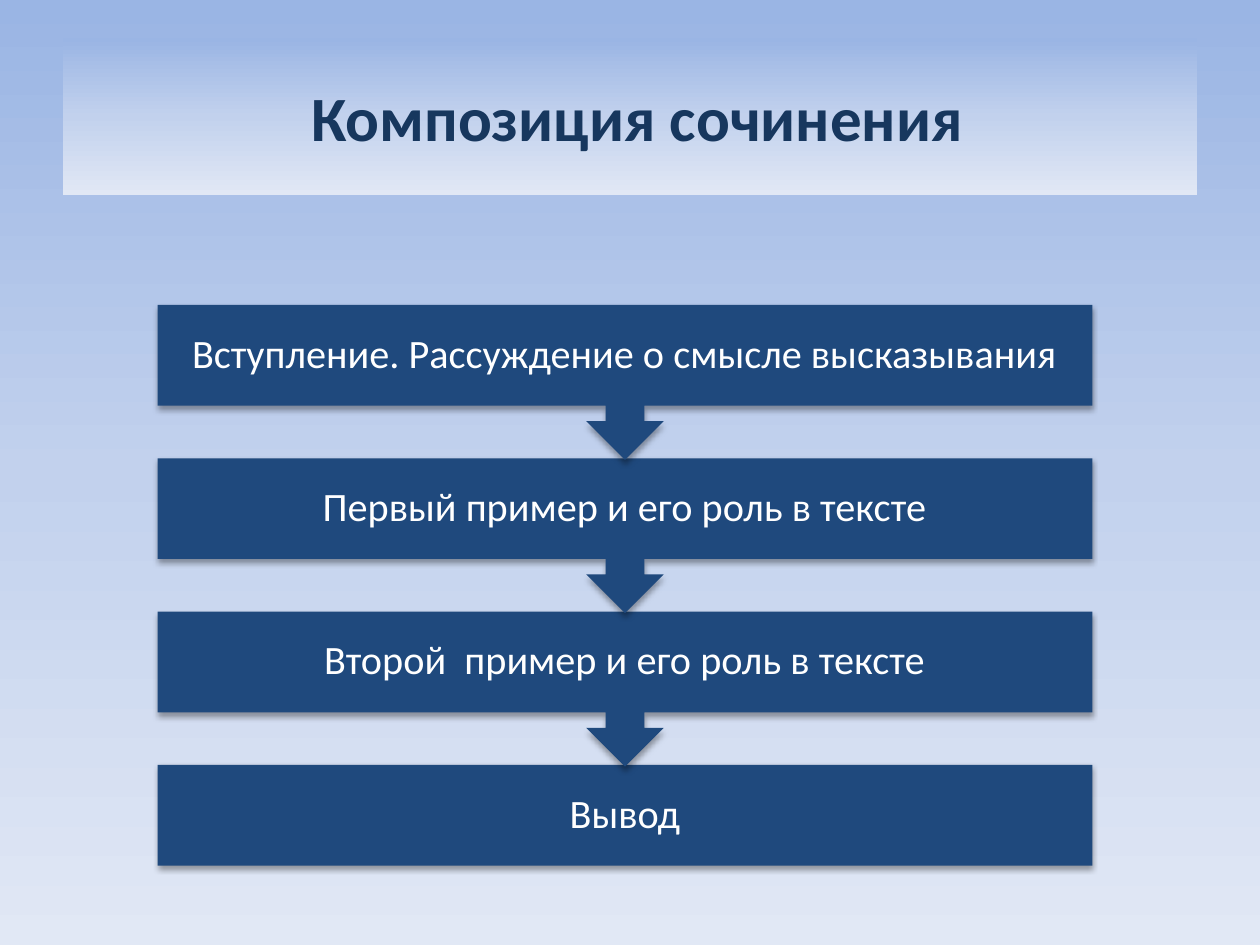
from dataclasses import dataclass

from lxml.etree import SubElement
from pptx import Presentation
from pptx.dml.color import RGBColor
from pptx.dml.fill import FillFormat
from pptx.enum.shapes import MSO_SHAPE
from pptx.enum.text import MSO_ANCHOR, PP_ALIGN
from pptx.oxml.ns import qn
from pptx.util import Inches, Pt

COLORS = {
    "sky": "9AB5E4", "haze": "C2D1ED", "mist": "E1E8F5",
    "navy": "1F497D", "title": "17375E", "white": "FFFFFF", "shadow": "000000",
}
BACKDROP = ((0, "sky"), (50, "haze"), (100, "mist"))
LEFT, TOP, WIDTH = 1.25, 2.42, 7.42
BOX_H, CALLOUT_H, PITCH = 0.8, 1.23, 1.217


@dataclass
class Step:
    text: str
    has_arrow: bool = True


STEPS = [
    Step("Вступление. Рассуждение о смысле высказывания"),
    Step("Первый пример и его роль в тексте"),
    Step("Второй  пример и его роль в тексте"),
    Step("Вывод", has_arrow=False),
]


def set_gradient(fill: FillFormat) -> None:
    """Apply the vertical three-stop backdrop gradient."""
    fill.gradient()
    fill.gradient_angle = 270
    stops = fill._fill._gradFill.find(qn("a:gsLst"))
    for stop in list(stops):
        stops.remove(stop)
    for pos, color in BACKDROP:
        gs = SubElement(stops, qn("a:gs"), pos=str(pos * 1000))
        SubElement(gs, qn("a:srgbClr"), val=COLORS[color])


def add_shadow(sp) -> None:
    """Give a shape a soft shadow falling straight down."""
    effects = sp._element.spPr.find(qn("a:effectLst"))
    shadow = SubElement(effects, qn("a:outerShdw"), blurRad=str(Pt(3.1)), dist=str(Pt(1.8)),
                        dir="5400000", rotWithShape="0")
    color = SubElement(shadow, qn("a:srgbClr"), val=COLORS["shadow"])
    SubElement(color, qn("a:alpha"), val="35000")


def add_block(s, kind: MSO_SHAPE, x: float, y: float, w: float, h: float):
    """Add a preset shape without outline or theme shadow."""
    sp = s.shapes.add_shape(kind, Inches(x), Inches(y), Inches(w), Inches(h))
    sp.line.fill.background()
    sp.shadow.inherit = False
    return sp


def write_text(sp, text: str, *, size: float, color: str, bold: bool = False,
               inset: float = 0.1, spacing: float = 1.0) -> None:
    """Write one centred, formatted paragraph into a shape."""
    tf = sp.text_frame
    tf.word_wrap = True
    tf.vertical_anchor = MSO_ANCHOR.MIDDLE
    tf.margin_left = tf.margin_right = Inches(inset)
    tf.margin_top = tf.margin_bottom = Inches(inset)
    p = tf.paragraphs[0]
    p.alignment = PP_ALIGN.CENTER
    p.line_spacing = spacing
    r = p.add_run()
    r.text = text
    r.font.name = "Calibri"
    r.font.size = Pt(size)
    r.font.bold = bold
    r.font.color.rgb = RGBColor.from_string(COLORS[color])


def add_step(s, step: Step, y: float) -> None:
    """Draw one step of the chain with its label."""
    kind = MSO_SHAPE.UP_ARROW_CALLOUT if step.has_arrow else MSO_SHAPE.RECTANGLE
    sp = add_block(s, kind, LEFT, y, WIDTH, CALLOUT_H if step.has_arrow else BOX_H)
    sp.rotation = 180 if step.has_arrow else 0
    sp.fill.solid()
    sp.fill.fore_color.rgb = RGBColor.from_string(COLORS["navy"])
    add_shadow(sp)
    label = s.shapes.add_textbox(Inches(LEFT), Inches(y), Inches(WIDTH), Inches(BOX_H))
    write_text(label, step.text, size=23, color="white", inset=0.18, spacing=0.9)


def main() -> None:
    """Build and save the slide."""
    prs = Presentation()
    prs.slide_width, prs.slide_height = Inches(10), Inches(7.5)
    s = prs.slides.add_slide(prs.slide_layouts[6])
    set_gradient(s.background.fill)
    title = add_block(s, MSO_SHAPE.RECTANGLE, 0.5, 0.3, 9, 1.25)
    set_gradient(title.fill)
    write_text(title, " Композиция сочинения", size=36, color="title", bold=True)
    for i, step in reversed(list(enumerate(STEPS))):
        add_step(s, step, TOP + i * PITCH)
    prs.save("out.pptx")


if __name__ == "__main__":
    main()
